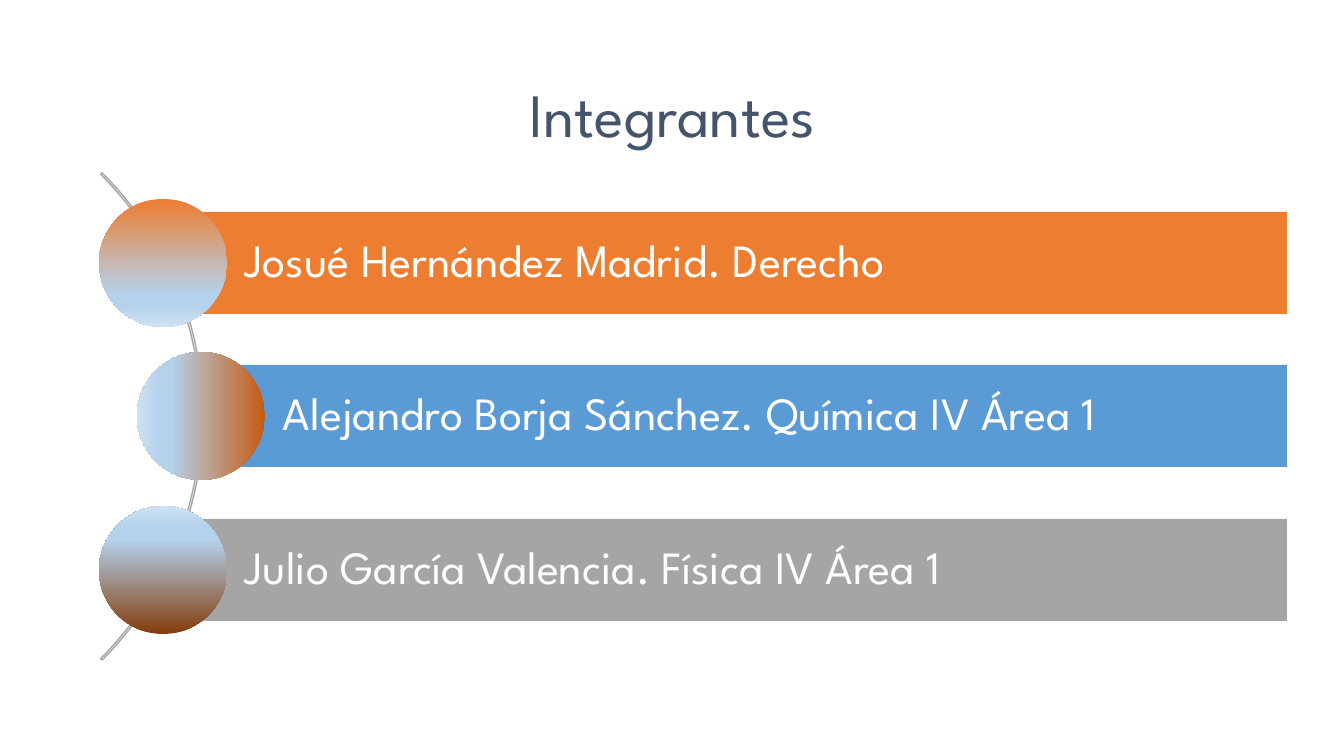
from lxml import etree
from pptx import Presentation
from pptx.dml.color import RGBColor
from pptx.enum.shapes import MSO_SHAPE as Shape
from pptx.enum.text import MSO_ANCHOR as Anchor, PP_ALIGN as Align
from pptx.oxml.ns import qn
from pptx.util import Pt

EMU_PER_PX = 914400 / 100.8
FONT = "League Spartan"
ROW_PITCH_TWICE = 307
FIRST_CENTER = 263
DISC = 128
BAR_HEIGHT = 102
BAR_RIGHT = 1287
DISC_TAIL = [(74, "B5D2EC"), (83, "B5D2EC"), (100, "CEE1F2")]

# name and subject, bar colour, disc colour, gradient angle, disc left
MEMBERS = [
    ("Josué Hernández Madrid. Derecho", "ED7D31", "ED7D31", 270, 99),
    ("Alejandro Borja Sánchez. Química IV Área 1", "5B9BD5", "C55A11", 180, 137),
    ("Julio García Valencia. Física IV Área 1", "A5A5A5", "843C0B", 90, 99),
]


def px(length):
    return round(length * EMU_PER_PX)


def rgb(color):
    return RGBColor.from_string(color)


def set_font(paragraph, size, color):
    paragraph.font.name = FONT
    paragraph.font.size = Pt(size)
    paragraph.font.color.rgb = rgb(color)


def add_plain_shape(slide, kind, left, top, width, height):
    """Add a preset shape without shadow or outline."""
    shape = slide.shapes.add_shape(kind, px(left), px(top), px(width), px(height))
    shape.shadow.inherit = False
    shape.line.fill.background()
    return shape


def set_title(slide, text):
    title = slide.shapes.title
    title.left, title.top, title.width, title.height = map(px, (93, 40, 1159, 146))
    title.text_frame.text = text
    title.text_frame.vertical_anchor = Anchor.MIDDLE
    paragraph = title.text_frame.paragraphs[0]
    paragraph.alignment = Align.CENTER
    set_font(paragraph, 44, "44546A")


def add_arc(slide):
    arc = add_plain_shape(slide, Shape.BLOCK_ARC, -486, 72, 689, 689)
    for index, value in enumerate((189, 27, 0.003)):
        arc.adjustments[index] = value
    arc.fill.background()
    arc.line.color.rgb = rgb("A5A5A5")
    arc.line.width = Pt(1)


def add_bar(slide, text, color, left, center):
    bar = add_plain_shape(slide, Shape.RECTANGLE, left, center - BAR_HEIGHT // 2,
                          BAR_RIGHT - left, BAR_HEIGHT)
    bar.fill.solid()
    bar.fill.fore_color.rgb = rgb(color)
    frame = bar.text_frame
    frame.word_wrap = True
    frame.vertical_anchor = Anchor.MIDDLE
    frame.margin_left = px(82)
    frame.margin_top = frame.margin_right = frame.margin_bottom = px(9)
    frame.text = text
    paragraph = frame.paragraphs[0]
    paragraph.alignment = Align.LEFT
    paragraph.line_spacing = 0.9
    set_font(paragraph, 33, "FFFFFF")


def add_disc(slide, color, angle, left, center):
    disc = add_plain_shape(slide, Shape.OVAL, left, center - DISC // 2, DISC, DISC)
    disc.fill.gradient()
    disc.fill.gradient_angle = angle
    stops = disc.element.spPr.find(qn("a:gradFill")).find(qn("a:gsLst"))
    for stop in list(stops):
        stops.remove(stop)
    for percent, stop_color in [(0, color)] + DISC_TAIL:
        stop = etree.SubElement(stops, qn("a:gs"), pos=str(percent * 1000))
        etree.SubElement(stop, qn("a:srgbClr"), val=stop_color)


def main():
    prs = Presentation()
    prs.slide_width, prs.slide_height = px(1344), px(756)
    slide = prs.slides.add_slide(prs.slide_layouts[5])
    set_title(slide, "Integrantes")
    add_arc(slide)
    for row, (text, bar_color, disc_color, angle, left) in enumerate(MEMBERS):
        center = FIRST_CENTER + row * ROW_PITCH_TWICE // 2
        add_bar(slide, text, bar_color, left + DISC // 2, center)
        add_disc(slide, disc_color, angle, left, center)
    prs.save("out.pptx")


if __name__ == "__main__":
    main()
